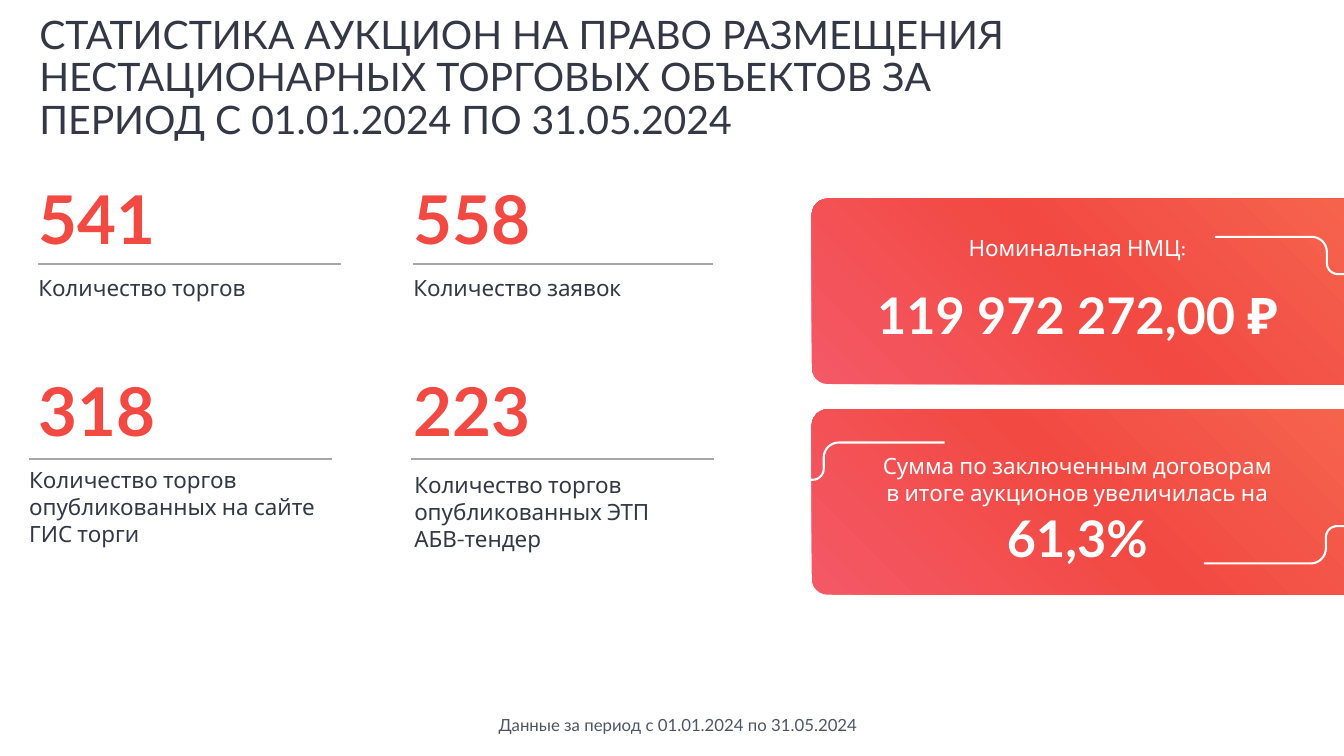
from math import cos, pi, sin

from lxml.etree import SubElement
from pptx import Presentation
from pptx.dml.color import RGBColor
from pptx.enum.shapes import MSO_CONNECTOR, MSO_SHAPE
from pptx.enum.text import MSO_ANCHOR, PP_ALIGN
from pptx.oxml.ns import qn
from pptx.util import Inches, Pt

DARK, RED, WHITE, GREY, SLATE = "343846", "F24942", "FFFFFF", "A6A6A6", "4E5568"
GRADIENT = [(0, "F45967"), (52, RED), (100, "F5634D")]


def color(target, value):
    """Set a font, fill or line colour from a hex string."""
    target.rgb = RGBColor.from_string(value)


def write(tf, lines, size, font, value, bold=False, align=PP_ALIGN.LEFT, spacing=None):
    """Write one paragraph, with a line break between the given lines."""
    p = tf.paragraphs[0]
    p.alignment = align
    if spacing:
        p.line_spacing = spacing
    for i, line in enumerate(lines):
        if i:
            p.add_line_break()
        r = p.add_run()
        r.text = line
        r.font.size, r.font.name, r.font.bold = Pt(size), font, bold
        color(r.font.color, value)


def add_text(s, x, y, w, h, lines, size, font, value, inset=0, anchor=MSO_ANCHOR.TOP, **style):
    """Add a wrapping text box."""
    tf = s.shapes.add_textbox(Inches(x), Inches(y), Inches(w), Inches(h)).text_frame
    tf.word_wrap = True
    tf.margin_left = Inches(inset)
    tf.vertical_anchor = anchor
    write(tf, lines, size, font, value, **style)


def add_title(s, x, y, w, h, text):
    """Place and fill the title placeholder."""
    sp = s.shapes.title
    sp.left, sp.top, sp.width, sp.height = Inches(x), Inches(y), Inches(w), Inches(h)
    tf = sp.text_frame
    tf.word_wrap = True
    tf.vertical_anchor = MSO_ANCHOR.MIDDLE
    write(tf, [text], 28, "Lato", DARK, spacing=0.9)


def add_stat(s, x, y, number, label, rule_x, rule_y, rule_w, label_x, label_y, label_h):
    """Add a figure with its rule and its label, offset from the given corner."""
    add_text(s, x, y, 2.82, 0.82, [number], 48, "Lato", RED,
             anchor=MSO_ANCHOR.MIDDLE, bold=True, spacing=0.9)
    left, top = x + rule_x, y + rule_y
    rule = s.shapes.add_connector(MSO_CONNECTOR.STRAIGHT, Inches(left), Inches(top),
                                  Inches(left + rule_w), Inches(top))
    color(rule.line.color, GREY)
    rule.line.width = Pt(1.5)
    SubElement(rule._element.spPr, qn("a:effectLst"))
    add_text(s, x + label_x, y + label_y, 2.97, label_h, [label], 16, "Karla", DARK)


def add_panel(s, x, y, w, h):
    """Add a gradient panel with rounded left corners."""
    sp = s.shapes.add_shape(MSO_SHAPE.ROUND_2_SAME_RECTANGLE, Inches(x + (w - h) / 2),
                            Inches(y + (h - w) / 2), Inches(h), Inches(w))
    sp.rotation = 270
    sp.adjustments[0] = 0.087
    sp.shadow.inherit = False
    sp.line.fill.background()
    sp.fill.gradient()
    grad = sp._element.spPr.find(qn("a:gradFill"))
    grad.set("rotWithShape", "0")
    stops = grad.find(qn("a:gsLst"))
    for stop in list(stops):
        stops.remove(stop)
    for position, value in GRADIENT:
        stop = SubElement(stops, qn("a:gs"), pos=str(position * 1000))
        SubElement(stop, qn("a:srgbClr"), val=value)
    lin = grad.find(qn("a:lin"))
    lin.set("ang", str(315 * 60000))
    lin.set("scaled", "0")


def add_track(s, x, y, knee, dx, dy):
    """Draw a line that turns at the knee and runs out at the offset end."""
    side, rise = (1 if dx > 0 else -1), (1 if dy > 0 else -1)
    r1, r2 = 0.15, 0.11
    turns = [i * pi / 16 for i in range(9)]
    pts = [(knee - r1 + r1 * sin(a), r1 - r1 * cos(a)) for a in turns]
    pts += [(knee + r2 - r2 * cos(a), abs(dy) - r2 + r2 * sin(a)) for a in turns]
    pts.append((abs(dx), abs(dy)))
    fb = s.shapes.build_freeform(Inches(x), Inches(y))
    fb.add_line_segments([(Inches(x + side * px), Inches(y + rise * py)) for px, py in pts],
                         close=False)
    sp = fb.convert_to_shape()
    sp.shadow.inherit = False
    sp.fill.background()
    color(sp.line.color, WHITE)
    sp.line.width = Pt(1.5)


def add_card(s, x, y, w, h, caption, value, caption_y, value_y, tracks):
    """Add a panel with its caption, value and tracks."""
    add_panel(s, x, y, w, h)
    for tx, ty, knee, dx, dy in tracks:
        add_track(s, x + tx, y + ty, knee, dx, dy)
    center = PP_ALIGN.CENTER
    add_text(s, x + 0.58, y + caption_y, 4.21, 0.36 * len(caption), caption, 16, "Karla", WHITE,
             align=center)
    add_text(s, x + 0.27, y + value_y, 4.83, 0.7, [value], 36, "Lato", WHITE,
             bold=True, align=center)


def main():
    """Build the slide."""
    prs = Presentation()
    prs.slide_width, prs.slide_height = Inches(13.33), Inches(7.5)
    s = prs.slides.add_slide(prs.slide_layouts[5])
    add_title(s, 0.29, 0.06, 10.03, 1.45,
              "СТАТИСТИКА АУКЦИОН НА ПРАВО РАЗМЕЩЕНИЯ НЕСТАЦИОНАРНЫХ ТОРГОВЫХ "
              "ОБЪЕКТОВ ЗА ПЕРИОД С 01.01.2024 ПО 31.05.2024")
    add_stat(s, 0.38, 1.8, "541", "Количество торгов", 0, 0.82, 3, 0, 0.87, 0.36)
    add_stat(s, 4.1, 1.8, "558", "Количество заявок", 0, 0.82, 2.97, 0, 0.87, 0.36)
    add_stat(s, 0.38, 3.7, "318", "Количество торгов опубликованных на сайте ГИС торги",
             -0.09, 0.85, 3, -0.09, 0.88, 0.9)
    add_stat(s, 4.1, 3.7, "223", "Количество торгов опубликованных ЭТП АБВ-тендер",
             -0.02, 0.85, 3, 0.01, 0.93, 0.9)
    add_card(s, 8.05, 1.97, 5.28, 1.84, ["Номинальная НМЦ:"], "119 972 272,00 ₽", 0.3, 0.8,
             [(4, 0.38, 1.11, 1.28, 0.37)])
    add_card(s, 8.05, 4.06, 5.28, 1.84,
             ["Сумма по заключенным договорам", "в итоге аукционов увеличилась на"],
             "61,3%", 0.38, 0.92,
             [(1.32, 0.33, 1.2, -1.39, 0.37), (3.89, 1.53, 1.21, 1.39, -0.37)])
    add_text(s, 4.78, 7.04, 3.89, 0.3, ["Данные за период с 01.01.2024 по 31.05.2024"], 12,
             "Lato", SLATE, inset=0.1, align=PP_ALIGN.CENTER)
    prs.save("out.pptx")


if __name__ == "__main__":
    main()
